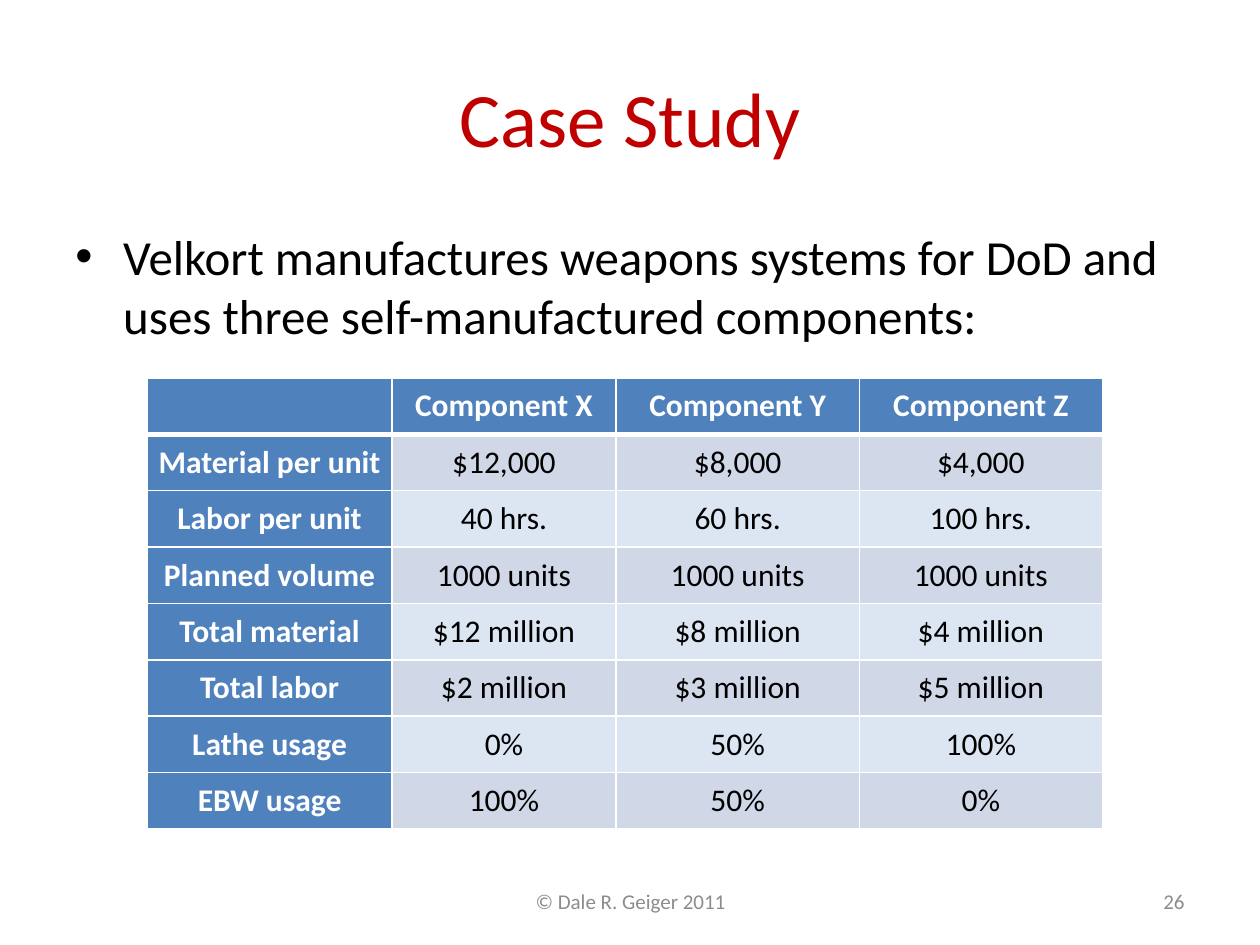
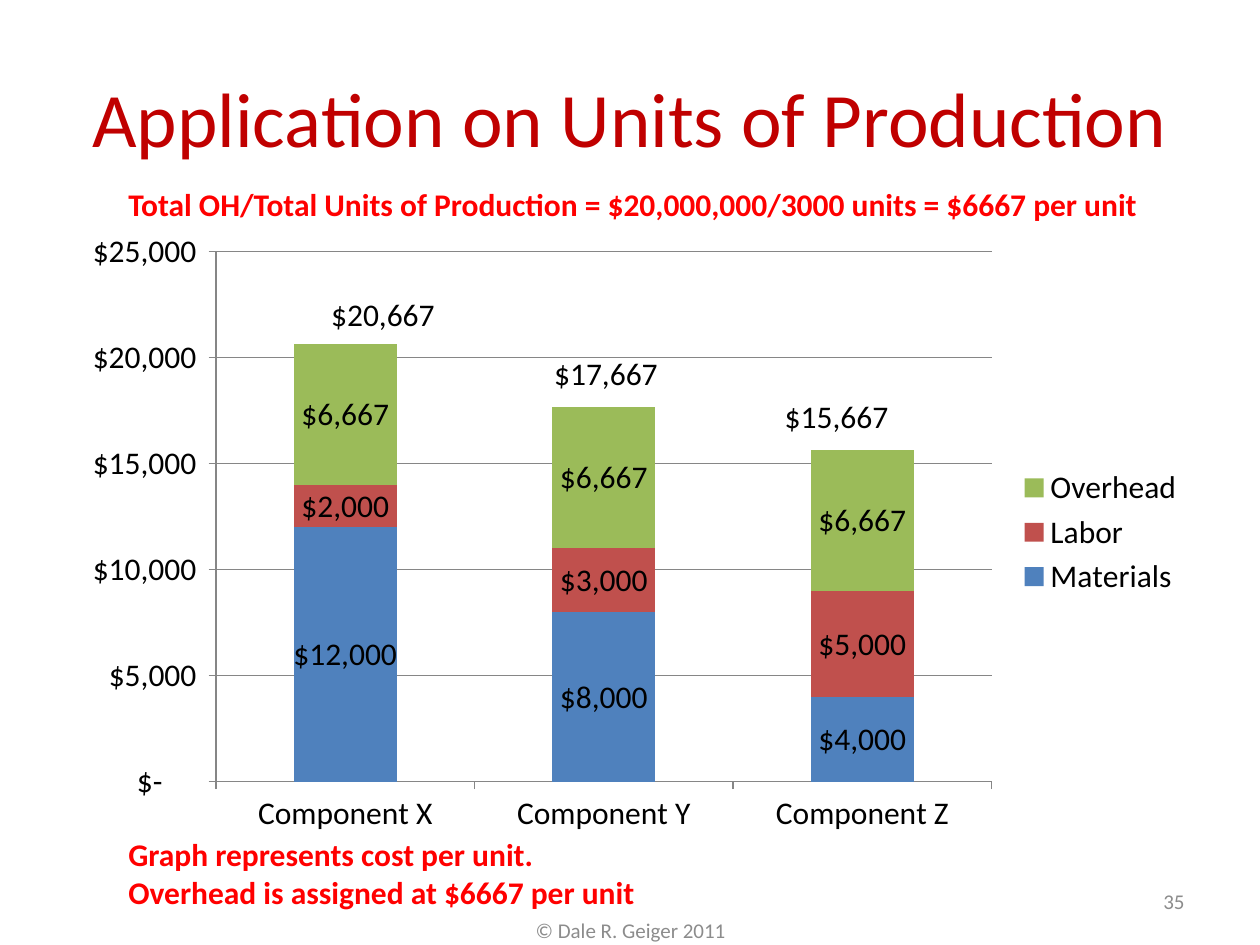
from lxml.etree import SubElement
from pptx import Presentation
from pptx.chart.data import CategoryChartData
from pptx.dml.color import RGBColor
from pptx.enum.chart import XL_CHART_TYPE, XL_LEGEND_POSITION, XL_TICK_MARK
from pptx.enum.text import MSO_ANCHOR, PP_ALIGN
from pptx.oxml import parse_xml
from pptx.oxml.ns import nsdecls, qn
from pptx.util import Inches, Pt

FONT = "Calibri"
TITLE_RED = RGBColor(0xC0, 0x00, 0x00)
NOTE_RED = RGBColor(0xFF, 0x00, 0x00)
BLACK = RGBColor(0x00, 0x00, 0x00)
WHITE = RGBColor(0xFF, 0xFF, 0xFF)
FOOTER_GRAY = RGBColor(0x8C, 0x8C, 0x8C)
AXIS_GRAY = RGBColor(0x86, 0x86, 0x86)
BLUE = RGBColor(0x4F, 0x81, 0xBD)
RED = RGBColor(0xC0, 0x50, 0x4D)
GREEN = RGBColor(0x9B, 0xBB, 0x59)
BANDS = [RGBColor(0xDC, 0xE6, 0xF2), RGBColor(0xD0, 0xD8, 0xE8)]
COMPONENTS = ["Component X", "Component Y", "Component Z"]


def add_text(tf, lines, size, color, bold=False, align=PP_ALIGN.LEFT):
    """Fill a text frame with one single-run paragraph per line."""
    for i, line in enumerate(lines):
        p = tf.add_paragraph() if i else tf.paragraphs[0]
        p.alignment = align
        r = p.add_run()
        r.text = line
        r.font.name = FONT
        r.font.size = Pt(size)
        r.font.bold = bold
        r.font.color.rgb = color


def add_box(s, box, lines, size, color, bold=False, align=PP_ALIGN.LEFT,
            anchor=MSO_ANCHOR.TOP, wrap=True):
    sp = s.shapes.add_textbox(*[Inches(v) for v in box])
    tf = sp.text_frame
    tf.word_wrap = wrap
    tf.vertical_anchor = anchor
    add_text(tf, lines, size, color, bold, align)
    return tf


prs = Presentation()
prs.slide_width, prs.slide_height = Inches(10), Inches(7.5)

# Title, footer and number of every slide
slides = []
for title, number, footer_top in [("Case Study", "26", 6.95),
                                  ("Application on Units of Production", "35", 7.18)]:
    s = prs.slides.add_slide(prs.slide_layouts[5])
    sp = s.shapes.title
    sp.left, sp.top, sp.width, sp.height = Inches(0.5), Inches(0.3), Inches(9), Inches(1.25)
    sp.text_frame.vertical_anchor = MSO_ANCHOR.MIDDLE
    add_text(sp.text_frame, [title], 44, TITLE_RED, align=PP_ALIGN.CENTER)
    add_box(s, (3.42, footer_top, 3.17, 0.4), ["© Dale R. Geiger 2011"], 12, FOOTER_GRAY,
            align=PP_ALIGN.CENTER, anchor=MSO_ANCHOR.MIDDLE)
    add_box(s, (7.17, 6.95, 2.33, 0.4), [number], 12, FOOTER_GRAY,
            align=PP_ALIGN.RIGHT, anchor=MSO_ANCHOR.MIDDLE)
    slides.append(s)
case_slide, units_slide = slides

# Case study: introduction
tf = add_box(case_slide, (0.5, 1.75, 9, 1.2),
             ["Velkort manufactures weapons systems for DoD and uses "
              "three self-manufactured components:"], 28, BLACK)
p = tf.paragraphs[0]
p.space_before = Pt(5.6)
pPr = p._p.get_or_add_pPr()
pPr.set("marL", str(Inches(0.38)))
pPr.set("indent", str(-Inches(0.38)))
SubElement(pPr, qn("a:buFont")).set("typeface", "Arial")
SubElement(pPr, qn("a:buChar")).set("char", "•")

# Case study: component table
rows = [
    [""] + COMPONENTS,
    ["Material per unit", "$12,000", "$8,000", "$4,000"],
    ["Labor per unit", "40 hrs.", "60 hrs.", "100 hrs."],
    ["Planned volume", "1000 units", "1000 units", "1000 units"],
    ["Total material", "$12 million", "$8 million", "$4 million"],
    ["Total labor", "$2 million", "$3 million", "$5 million"],
    ["Lathe usage", "0%", "50%", "100%"],
    ["EBW usage", "100%", "50%", "0%"],
]
table = case_slide.shapes.add_table(len(rows), 4, Inches(1.17), Inches(3),
                                    Inches(7.58), Inches(3.58)).table
table.first_col = True
for column, width in zip(table.columns, [1.94, 1.78, 1.93, 1.93]):
    column.width = Inches(width)
for i, row in enumerate(rows):
    for j, value in enumerate(row):
        cell = table.cell(i, j)
        header = i == 0 or j == 0
        cell.vertical_anchor = MSO_ANCHOR.MIDDLE
        cell.margin_left = cell.margin_right = Inches(0.07)
        cell.margin_top = cell.margin_bottom = 0
        if value:
            add_text(cell.text_frame, [value], 18, WHITE if header else BLACK,
                     header, PP_ALIGN.CENTER)
        for side in "LRTB":
            under_header = (i, side) in [(0, "B"), (1, "T")]
            cell._tc.get_or_add_tcPr().append(parse_xml(
                f'<a:ln{side} {nsdecls("a")} w="{Pt(3 if under_header else 1)}">'
                f'<a:solidFill><a:srgbClr val="{WHITE}"/></a:solidFill></a:ln{side}>'))
        cell.fill.solid()
        cell.fill.fore_color.rgb = BLUE if header else BANDS[i % 2]

# Units of production: cost chart
DOLLARS = '_("$"* #,##0_);_("$"* \\(#,##0\\);_("$"* "-"??_);_(@_)'
data = CategoryChartData(number_format=DOLLARS)
data.categories = COMPONENTS
data.add_series("Materials", [12000, 8000, 4000])
data.add_series("Labor", [2000, 3000, 5000])
data.add_series("Overhead", [6667] * 3)
chart = units_slide.shapes.add_chart(XL_CHART_TYPE.COLUMN_STACKED, Inches(0.5), Inches(1.75),
                                     Inches(9), Inches(4.95), data).chart
chart.font.name = FONT
chart.font.size = Pt(18)
chart.font.color.rgb = BLACK
chart.has_title = False
chart.has_legend = True
chart.legend.position = XL_LEGEND_POSITION.RIGHT
chart.legend.include_in_layout = False

value_axis = chart.value_axis
value_axis.minimum_scale, value_axis.maximum_scale, value_axis.major_unit = 0, 25000, 5000
value_axis.tick_labels.number_format = DOLLARS
value_axis.tick_labels.number_format_is_linked = False
value_axis.has_major_gridlines = True
for axis in (chart.category_axis, value_axis):
    axis.major_tick_mark = XL_TICK_MARK.OUTSIDE
    axis.format.line.color.rgb = AXIS_GRAY
value_axis.major_gridlines.format.line.color.rgb = AXIS_GRAY

plot = chart.plots[0]
plot.gap_width, plot.overlap = 150, 100
plot.vary_by_categories = False
for series, color in zip(plot.series, [BLUE, RED, GREEN]):
    series.format.fill.solid()
    series.format.fill.fore_color.rgb = color
    labels = series.data_labels
    labels.show_value = True
    labels.number_format = DOLLARS
    labels.number_format_is_linked = False

plot_area = chart._chartSpace.chart.plotArea
for old in plot_area.findall(qn("c:layout")):
    plot_area.remove(old)
plot_area.insert(0, parse_xml(
    f'<c:layout {nsdecls("c")}><c:manualLayout><c:layoutTarget val="inner"/>'
    '<c:xMode val="edge"/><c:yMode val="edge"/><c:x val="0.135"/><c:y val="0.05"/>'
    '<c:w val="0.684"/><c:h val="0.85"/></c:manualLayout></c:layout>'))

# Units of production: notes and column totals
add_box(units_slide, (0.92, 6.58, 4.25, 0.71),
        ["Graph represents cost per unit.", "Overhead is assigned at $6667 per unit"],
        18, NOTE_RED, bold=True, wrap=False)
add_box(units_slide, (0.92, 1.42, 8.33, 0.4),
        ["Total OH/Total Units of Production = $20,000,000/3000 units = $6667 per unit"],
        18, NOTE_RED, bold=True)
for left, top, total in [(2.53, 2.29, "$20,667"), (4.3, 2.76, "$17,667"), (6.13, 3.1, "$15,667")]:
    add_box(units_slide, (left, top, 1.03, 0.4), [total], 18, BLACK, wrap=False)

prs.save("out.pptx")
